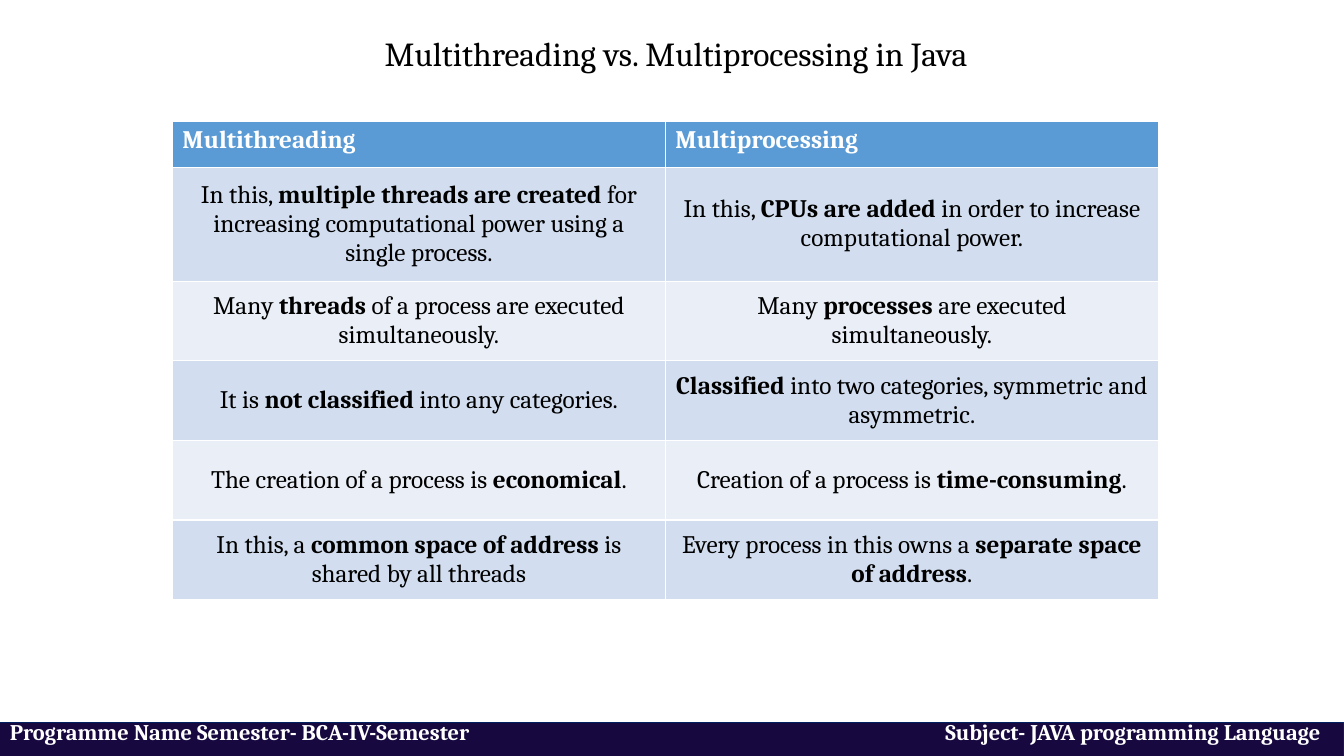
from pptx import Presentation
from pptx.dml.color import RGBColor
from pptx.enum.shapes import MSO_SHAPE
from pptx.enum.text import MSO_ANCHOR, PP_ALIGN
from pptx.oxml.ns import qn
from pptx.util import Inches, Pt
from lxml.etree import SubElement

WHITE = RGBColor(0xFF, 0xFF, 0xFF)
BLACK = RGBColor(0, 0, 0)
HEADER_BLUE = RGBColor(0x5B, 0x9B, 0xD5)
BAND_DARK = RGBColor(0xD2, 0xDE, 0xEF)
BAND_LIGHT = RGBColor(0xEA, 0xEF, 0xF7)
FOOTER_FILL = RGBColor(0x17, 0x08, 0x40)
FOOTER_LINE = RGBColor(0x00, 0x20, 0x60)

# Asterisk pairs enclose the bold words
ROWS = [
    ("**Multithreading**", "**Multiprocessing**"),
    ("In this, **multiple threads are created** for increasing computational power using a single process.",
     "In this, **CPUs are added** in order to increase computational power."),
    ("Many **threads** of a process are executed simultaneously.",
     "Many **processes** are executed simultaneously."),
    ("It is **not classified** into any categories.",
     "**Classified** into two categories, symmetric and asymmetric."),
    ("The creation of a process is **economical**.",
     "Creation of a process is **time-consuming**."),
    ("In this, a **common space of address** is shared by all threads",
     "Every process in this owns a **separate space of address**."),
]
ROW_HEIGHTS = [0.46, 1.13] + [0.79] * 4


def style_font(paragraph, size, color):
    paragraph.font.name = "Cambria"
    paragraph.font.size = Pt(size)
    paragraph.font.color.rgb = color


deck = Presentation()
deck.slide_width = Inches(13.33)
deck.slide_height = Inches(7.5)
page = deck.slides.add_slide(deck.slide_layouts[5])

# Title
title = page.shapes.title
title.left, title.top = Inches(3.6), Inches(0.28)
title.width, title.height = Inches(6.21), Inches(0.5)
title.text_frame.text = "Multithreading vs. Multiprocessing in Java"
title.text_frame.word_wrap = False
title.text_frame.vertical_anchor = MSO_ANCHOR.MIDDLE
title.text_frame.paragraphs[0].alignment = PP_ALIGN.CENTER
style_font(title.text_frame.paragraphs[0], 24, BLACK)

# Comparison table
table = page.shapes.add_table(len(ROWS), 2, Inches(1.71), Inches(1.2),
                              Inches(9.78), Inches(sum(ROW_HEIGHTS))).table
for column in table.columns:
    column.width = Inches(4.89)
for row_index, (texts, height) in enumerate(zip(ROWS, ROW_HEIGHTS)):
    table.rows[row_index].height = Inches(height)
    is_header = row_index == 0
    band = BAND_DARK if row_index % 2 else BAND_LIGHT
    for column_index, text in enumerate(texts):
        cell = table.cell(row_index, column_index)
        cell.fill.solid()
        cell.fill.fore_color.rgb = HEADER_BLUE if is_header else band
        cell.vertical_anchor = MSO_ANCHOR.TOP if is_header else MSO_ANCHOR.MIDDLE
        para = cell.text_frame.paragraphs[0]
        para.alignment = PP_ALIGN.LEFT if is_header else PP_ALIGN.CENTER
        style_font(para, 18, WHITE if is_header else BLACK)
        for part_index, part in enumerate(text.split("**")):
            if part:
                span = para.add_run()
                span.text = part
                span.font.bold = part_index % 2 == 1

# Footer bar, its second label set by a right tab
footer = page.shapes.add_shape(MSO_SHAPE.RECTANGLE, 0, Inches(7.17),
                               Inches(13.33), Inches(0.34))
footer.shadow.inherit = False
footer.fill.solid()
footer.fill.fore_color.rgb = FOOTER_FILL
footer.line.color.rgb = FOOTER_LINE
footer.line.width = Pt(0.75)
frame = footer.text_frame
frame.margin_top = frame.margin_bottom = 0
frame.vertical_anchor = MSO_ANCHOR.TOP
para = frame.paragraphs[0]
para.text = "Programme Name Semester- BCA-IV-Semester\tSubject- JAVA programming Language"
para.alignment = PP_ALIGN.LEFT
para.line_spacing = 0.85
tabs = SubElement(para._p.get_or_add_pPr(), qn("a:tabLst"))
SubElement(tabs, qn("a:tab"), pos=str(Inches(13)), algn="r")
style_font(para, 16, WHITE)
para.font.bold = True

deck.save("out.pptx")
